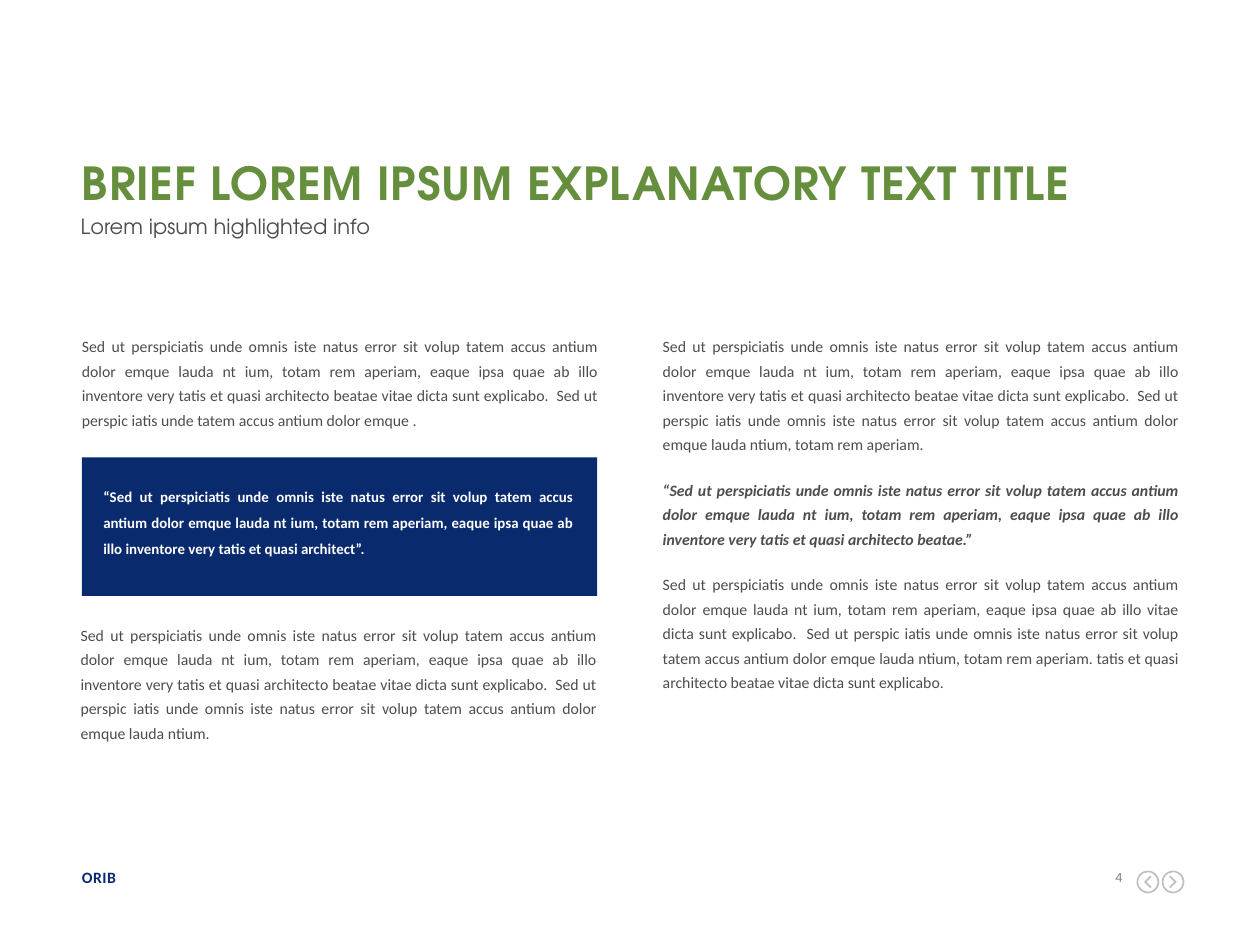
"""Build a two-column text slide with a title, a quote panel and a page footer."""
import dataclasses
import typing

import pptx
import pptx.dml.color
import pptx.enum.shapes
import pptx.enum.text
import pptx.util

PX = 9144
NAVY, GREEN, INK, GREY, SILVER, WHITE = "092A6D", "658E3D", "4D4D4D", "808080", "BFBFBF", "FFFFFF"
BODY_FONT, TITLE_FONT = "Calibri", "TeX Gyre Adventor"
ALIGN = pptx.enum.text.PP_ALIGN
SHAPE = pptx.enum.shapes.MSO_SHAPE

OPENING = (
    "Sed ut perspiciatis unde omnis iste natus error sit volup tatem accus antium "
    "dolor emque lauda nt ium, totam rem aperiam, eaque ipsa quae ab illo "
)
ARCHITECT = OPENING + "inventore very tatis et quasi architect"
EXPLAINED = ARCHITECT + "o beatae vitae dicta sunt explicabo.  Sed ut perspic iatis unde "
DOLOR = "omnis iste natus error sit volup tatem accus antium dolor emque lauda ntium"


@dataclasses.dataclass(frozen=True)
class Style:
    """Font and paragraph values shared by a kind of text."""
    font: dict[str, typing.Any]
    color: str
    paragraph: dict[str, typing.Any] = dataclasses.field(default_factory=dict)
    tracking: int = 0


@dataclasses.dataclass(frozen=True)
class Passage:
    """Styled paragraphs in one place on the slide."""
    box: tuple[int, int, int, int]
    paragraphs: list[tuple[str, Style]]


@dataclasses.dataclass(frozen=True)
class Arrow:
    """A round navigation button pointing left (-1) or right (1)."""
    center_x: int
    direction: int


def typeface(size: float, name: str = BODY_FONT, bold: bool = False, italic: bool = False) -> dict[str, typing.Any]:
    """Return the font values for a style."""
    return {"size": pptx.util.Pt(size), "name": name, "bold": bold, "italic": italic}


def justified(leading: int, after: int) -> dict[str, typing.Any]:
    """Return the paragraph values for justified text."""
    return {
        "alignment": ALIGN.JUSTIFY,
        "line_spacing": pptx.util.Pt(leading),
        "space_after": pptx.util.Pt(after),
    }


TITLE = Style(typeface(26, TITLE_FONT, bold=True), GREEN, tracking=50)
SUBTITLE = Style(typeface(12, TITLE_FONT), INK, {"line_spacing": pptx.util.Pt(12)})
BODY = Style(typeface(9), INK, justified(14, 12))
EMPHASIS = Style(typeface(9, bold=True, italic=True), INK, justified(14, 12))
QUOTE = Style(typeface(8.5, bold=True), WHITE, justified(15, 6))
OWNER = Style(typeface(9, bold=True), NAVY, tracking=30)
PAGE = Style(typeface(8), GREY, {"alignment": ALIGN.RIGHT}, tracking=30)

PASSAGES = [
    Passage((65, 689, 195, 15), [("ORIB", OWNER)]),
    Passage((868, 689, 23, 13), [("4", PAGE)]),
    Passage((65, 123, 870, 42), [("BRIEF LOREM IPSUM EXPLANATORY TEXT TITLE", TITLE)]),
    Passage((64, 173, 870, 42), [("Lorem ipsum highlighted info", SUBTITLE)]),
    Passage((65, 263, 409, 77), [(EXPLAINED + "tatem accus antium dolor emque .", BODY)]),
    Passage((526, 263, 409, 287), [
        (EXPLAINED + DOLOR + ", totam rem aperiam.", BODY),
        ("“" + ARCHITECT + "o beatae.”", EMPHASIS),
        (OPENING + "vitae dicta sunt explicabo.  Sed ut perspic iatis unde " + DOLOR
         + ", totam rem aperiam. tatis et quasi architecto beatae vitae dicta sunt explicabo.", BODY),
    ]),
    Passage((64, 492, 409, 97), [(EXPLAINED + DOLOR + ".", BODY)]),
]
QUOTE_PANEL = (65, 363, 409, 110)
QUOTE_PASSAGE = Passage((82, 380, 373, 54), [("“" + ARCHITECT + "”.", QUOTE)])
ARROWS = [Arrow(931, 1), Arrow(911, -1)]
ARROW_Y, ARROW_SIZE = 700, 18
CHEVRON = [(-3, -4), (1, 0), (-3, 4), (-2, 5), (3, 0), (-2, -5)]


def rgb(color: str) -> pptx.dml.color.RGBColor:
    """Turn a hex string into a colour."""
    return pptx.dml.color.RGBColor.from_string(color)


def emu(box: tuple[int, ...]) -> list[int]:
    """Turn px lengths into EMU."""
    return [length * PX for length in box]


def assign(target: typing.Any, values: dict[str, typing.Any]) -> None:
    """Set each named attribute on the target."""
    for name, value in values.items():
        setattr(target, name, value)


def paint(shape: typing.Any, color: str) -> None:
    """Give a shape a plain fill without line or shadow."""
    shape.shadow.inherit = False
    shape.fill.solid()
    shape.fill.fore_color.rgb = rgb(color)
    shape.line.fill.background()


def write(shape: typing.Any, passage: Passage) -> None:
    """Write the passage into a shape without margins."""
    frame = shape.text_frame
    assign(frame, {
        "word_wrap": True,
        "vertical_anchor": pptx.enum.text.MSO_ANCHOR.TOP,
        **dict.fromkeys(("margin_left", "margin_top", "margin_right", "margin_bottom"), 0),
    })
    for index, (words, style) in enumerate(passage.paragraphs):
        paragraph = frame.add_paragraph() if index else frame.paragraphs[0]
        assign(paragraph, style.paragraph)
        run = paragraph.add_run()
        run.text = words
        assign(run.font, style.font)
        run.font.color.rgb = rgb(style.color)
        if style.tracking:
            run._r.get_or_add_rPr().set("spc", str(style.tracking))


def draw_panel(slide: typing.Any, box: tuple[int, int, int, int]) -> typing.Any:
    """Draw a navy rectangle."""
    panel = slide.shapes.add_shape(SHAPE.RECTANGLE, *emu(box))
    paint(panel, NAVY)
    return panel


def draw_arrow(slide: typing.Any, arrow: Arrow) -> None:
    """Draw a ring with a chevron inside."""
    half = ARROW_SIZE // 2
    ring = slide.shapes.add_shape(
        SHAPE.DONUT, *emu((arrow.center_x - half, ARROW_Y - half, ARROW_SIZE, ARROW_SIZE)))
    ring.adjustments[0] = 0.07
    points = [(arrow.center_x + arrow.direction * x, ARROW_Y + y) for x, y in CHEVRON]
    outline = slide.shapes.build_freeform(*points[0], scale=PX)
    outline.add_line_segments(points[1:], close=True)
    for part in (ring, outline.convert_to_shape()):
        paint(part, SILVER)


def main() -> None:
    """Build and save the slide."""
    deck = pptx.Presentation()
    assign(deck, {"slide_width": 1000 * PX, "slide_height": 750 * PX})
    slide = deck.slides.add_slide(deck.slide_layouts[6])
    for arrow in ARROWS:
        draw_arrow(slide, arrow)
    for passage in PASSAGES:
        write(slide.shapes.add_textbox(*emu(passage.box)), passage)
    draw_panel(slide, QUOTE_PANEL)
    write(draw_panel(slide, QUOTE_PASSAGE.box), QUOTE_PASSAGE)
    deck.save("out.pptx")


if __name__ == "__main__":
    main()
